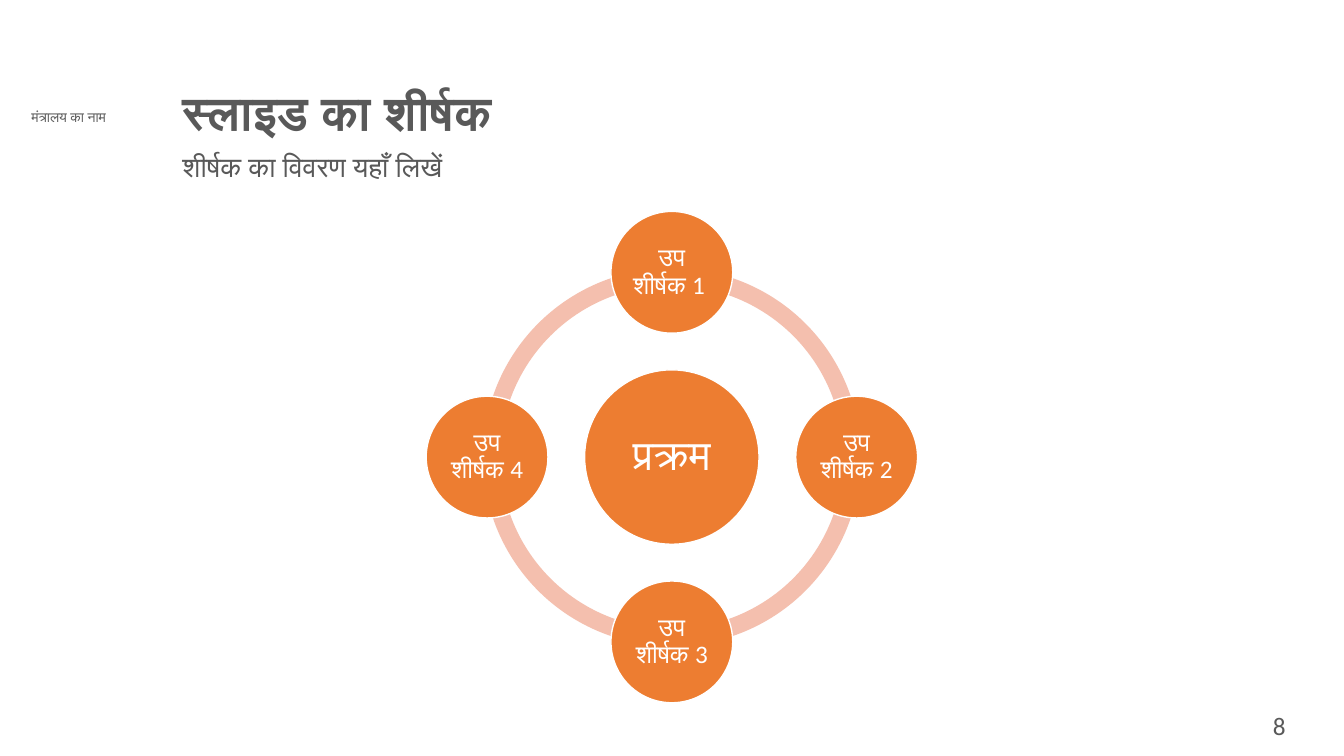
import math
from dataclasses import dataclass

from lxml import etree
from pptx import Presentation
from pptx.dml.color import RGBColor
from pptx.enum import shapes, text
from pptx.oxml import ns
from pptx.util import Pt


@dataclass(frozen=True)
class Theme:
    ink: RGBColor = RGBColor(0x59, 0x59, 0x59)
    white: RGBColor = RGBColor(0xFF, 0xFF, 0xFF)
    disc: RGBColor = RGBColor(0xED, 0x7D, 0x31)
    ring: RGBColor = RGBColor(0xF4, 0xBF, 0xAE)
    font: str = "Calibri"
    label_font: str = "Lato"
    title_size: float = 34
    subtitle_size: float = 20
    hub_size: float = 30
    node_size: float = 18
    number_size: float = 18
    label_size: float = 10


@dataclass(frozen=True)
class Area:
    left: float
    top: float
    width: float
    height: float

    def lengths(self) -> tuple:
        return Pt(self.left), Pt(self.top), Pt(self.width), Pt(self.height)


@dataclass(frozen=True)
class Disc:
    words: str
    x: float
    y: float
    diameter: float
    size: float
    inset: float


THEME = Theme()
CENTER_X, CENTER_Y = 479.9, 326.5
RING_DIAMETER = 270
ORBIT = 132
HUB = Disc("प्रक्रम", CENTER_X, CENTER_Y, 124.6, THEME.hub_size, 3)
NODE_LABELS = ["उप शीर्षक 1 ", "उप शीर्षक 2", "उप शीर्षक 3", "उप शीर्षक 4"]


def centered(x: float, y: float, diameter: float) -> Area:
    return Area(x - diameter / 2, y - diameter / 2, diameter, diameter)


def style_text(box, size: float, color: RGBColor, font: str = THEME.font, bold: bool = False) -> None:
    for para in box.text_frame.paragraphs:
        for span in para.runs:
            span.font.name = font
            span.font.size = Pt(size)
            span.font.bold = bold
            span.font.color.rgb = color


def fill_placeholder(box, area: Area, words: str, size: float, bold: bool = False) -> None:
    box.left, box.top, box.width, box.height = area.lengths()
    frame = box.text_frame
    frame.text = words
    frame.auto_size = text.MSO_AUTO_SIZE.NONE
    frame.vertical_anchor = text.MSO_ANCHOR.TOP
    para = frame.paragraphs[0]
    properties = para._p.get_or_add_pPr()
    properties.set("marL", "0")
    properties.set("indent", "0")
    etree.SubElement(properties, ns.qn("a:buNone"))
    para.alignment = text.PP_ALIGN.LEFT
    para.line_spacing = 0.9
    para.space_before = Pt(0)
    style_text(box, size, THEME.ink, bold=bold)


def add_label(page, area: Area, words: str, size: float, font: str) -> None:
    box = page.shapes.add_textbox(*area.lengths())
    box.text_frame.word_wrap = True
    box.text_frame.text = words
    box.text_frame.paragraphs[0].alignment = text.PP_ALIGN.CENTER
    style_text(box, size, THEME.ink, font)


def add_ring_quarter(page, quarter: int) -> None:
    area = centered(CENTER_X, CENTER_Y, RING_DIAMETER)
    arc = page.shapes.add_shape(shapes.MSO_SHAPE.BLOCK_ARC, *area.lengths())
    arc.shadow.inherit = False
    # A quarter turn is 54 adjustment units
    arc.adjustments[0] = 54 * quarter
    arc.adjustments[1] = 54 * ((quarter + 1) % 4)
    arc.adjustments[2] = 0.046
    arc.fill.solid()
    arc.fill.fore_color.rgb = THEME.ring
    arc.line.fill.background()


def add_disc(page, disc: Disc) -> None:
    area = centered(disc.x, disc.y, disc.diameter)
    circle = page.shapes.add_shape(shapes.MSO_SHAPE.OVAL, *area.lengths())
    circle.shadow.inherit = False
    circle.fill.solid()
    circle.fill.fore_color.rgb = THEME.disc
    circle.line.color.rgb = THEME.white
    circle.line.width = Pt(1)
    frame = circle.text_frame
    frame.word_wrap = True
    frame.margin_left = frame.margin_right = Pt(disc.inset)
    frame.margin_top = frame.margin_bottom = Pt(disc.inset)
    frame.vertical_anchor = text.MSO_ANCHOR.MIDDLE
    frame.text = disc.words
    frame.paragraphs[0].alignment = text.PP_ALIGN.CENTER
    frame.paragraphs[0].line_spacing = 0.9
    style_text(circle, disc.size, THEME.white)


def main() -> None:
    deck = Presentation()
    deck.slide_width, deck.slide_height = Pt(960), Pt(540)
    page = deck.slides.add_slide(deck.slide_layouts[1])

    # Headings
    add_label(page, Area(2.2, 74.2, 93.6, 19.4), "मंत्रालय का नाम", THEME.label_size, THEME.label_font)
    fill_placeholder(page.shapes.title, Area(123.1, 60.5, 692, 39.6),
                     "स्लाइड का शीर्षक", THEME.title_size, bold=True)
    fill_placeholder(page.placeholders[1], Area(123.1, 105.8, 692, 45.4),
                     "शीर्षक का विवरण यहाँ लिखें", THEME.subtitle_size)

    # Ring and hub
    for quarter in range(4):
        add_ring_quarter(page, quarter)
    add_disc(page, HUB)

    # Nodes, clockwise from the top
    for index, words in enumerate(NODE_LABELS):
        angle = math.tau * index / len(NODE_LABELS)
        x = CENTER_X + ORBIT * math.sin(angle)
        y = CENTER_Y - ORBIT * math.cos(angle)
        add_disc(page, Disc(words, x, y, 87, THEME.node_size, 2))

    # Page number
    add_label(page, Area(871.2, 504, 85, 32.4), "8", THEME.number_size, THEME.font)
    deck.save("out.pptx")


if __name__ == "__main__":
    main()
